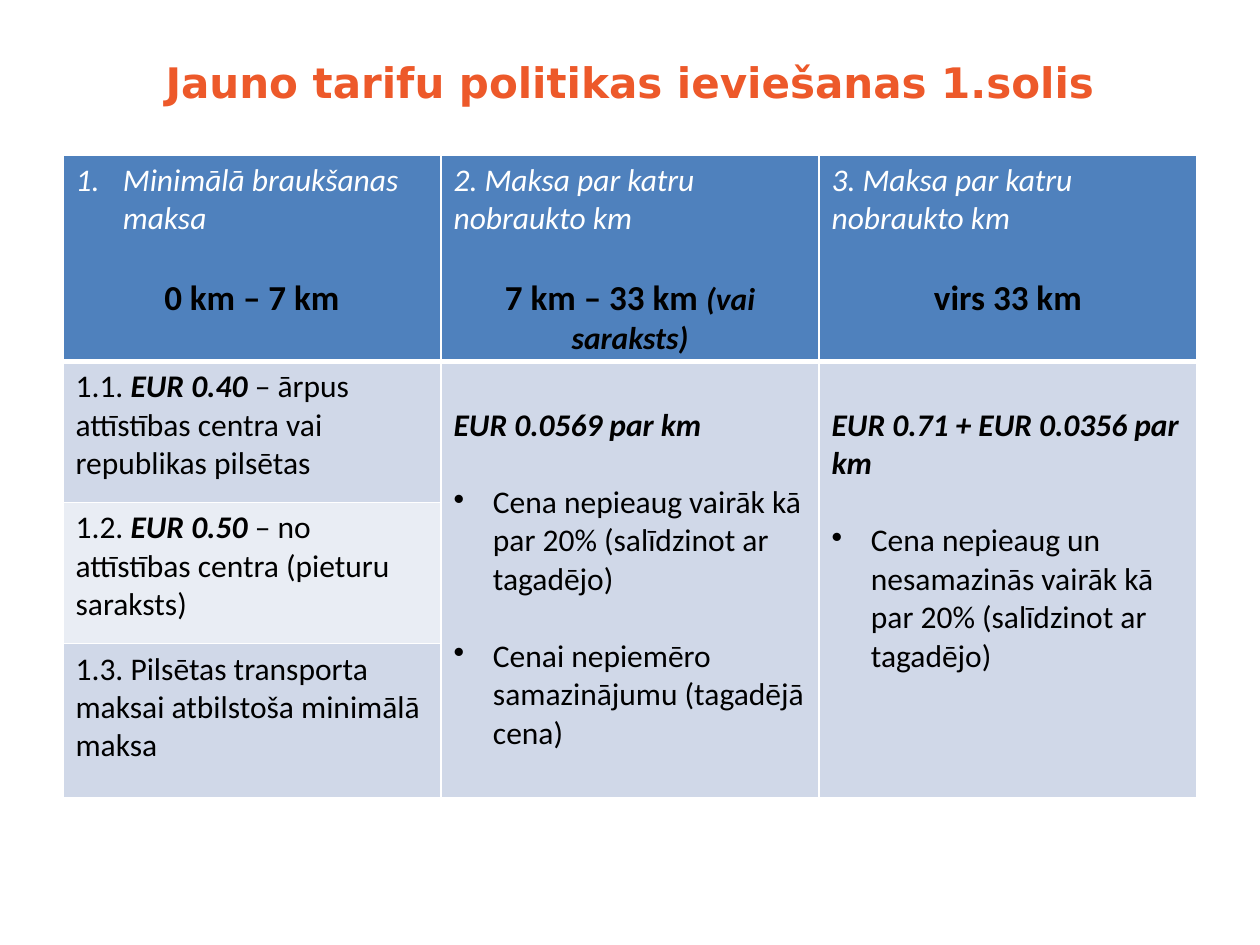
from dataclasses import dataclass

from lxml import etree
from pptx import Presentation
from pptx.dml.color import RGBColor
from pptx.enum import text as te
from pptx.oxml import ns
from pptx.util import Pt


@dataclass(frozen=True)
class Theme:
    title: str = "ED592A"
    head: str = "4F81BD"
    band: str = "D0D8E8"
    pale: str = "E9EDF4"
    white: str = "FFFFFF"
    black: str = "000000"
    font: str = "Calibri"
    wide: str = "DejaVu Sans"
    body: int = 18
    large: int = 20
    huge: int = 24
    line: int = 22  # height of one body line
    thin: int = 1
    thick: int = 3


T = Theme()


@dataclass(frozen=True)
class Run:
    text: str
    bold: bool = False
    slant: bool = False
    size: int = T.body
    color: str = T.black
    font: str = T.font


@dataclass(frozen=True)
class Para:
    runs: tuple[Run, ...]
    mid: bool = False
    gap: int = 0
    mark: str = ""
    hang: float = 0


@dataclass(frozen=True)
class Cell:
    row: int
    col: int
    fill: str
    paras: tuple[Para, ...]
    rows: int = 1
    drop: int = 0


def head(col: int, label: str, *runs: Run, mark: str = "") -> Cell:
    top = Run(label, slant=True, color=T.white)
    return Cell(0, col, T.head, (
        Para((top,), mark=mark, hang=27 if mark else 0),
        Para(runs, mid=True, gap=T.line)))


def item(row: int, fill: str, *runs: Run) -> Cell:
    return Cell(row, 0, fill, (Para(runs),))


def rate(col: int, price: str, *notes: str) -> Cell:
    """A price with bulleted notes, spanning all body rows."""
    lines = [Para((Run(price, bold=True, slant=True),))]
    lines += [Para((Run(note),), gap=T.line, mark="•", hang=22.5) for note in notes]
    return Cell(1, col, T.band, tuple(lines), rows=3, drop=T.line)


def big(words: str) -> Run:
    return Run(words, bold=True, size=T.large)


def price(words: str) -> Run:
    return Run(words, bold=True, slant=True)


CELLS = (
    head(0, "Minimālā braukšanas maksa", big("0 km – 7 km"), mark="1."),
    head(1, "2. Maksa par katru nobraukto km",
         big("7 km – 33 km "), price("(vai saraksts)")),
    head(2, "3. Maksa par katru nobraukto km", big("virs 33 km")),
    item(1, T.band, Run("1.1. "), price("EUR 0.40 "),
         Run("– ārpus attīstības centra vai republikas pilsētas")),
    item(2, T.pale, Run("1.2. "), price("EUR 0.50 "),
         Run("– no attīstības centra (pieturu saraksts)")),
    item(3, T.band, Run("1.3. Pilsētas transporta maksai atbilstoša minimālā maksa")),
    rate(1, "EUR 0.0569 par km",
         "Cena nepieaug vairāk kā par 20% (salīdzinot ar tagadējo)",
         "Cenai nepiemēro samazinājumu (tagadējā cena)"),
    rate(2, "EUR 0.71 + EUR 0.0356 par km",
         "Cena nepieaug un nesamazinās vairāk kā par 20% (salīdzinot ar tagadējo)"),
)


def write(frame, paras: tuple[Para, ...]) -> None:
    for i, para in enumerate(paras):
        p = frame.add_paragraph() if i else frame.paragraphs[0]
        p.alignment = te.PP_ALIGN.CENTER if para.mid else te.PP_ALIGN.LEFT
        if para.gap:
            p.space_before = Pt(para.gap)
        if para.mark:
            hang(p, para)
        for run in para.runs:
            r = p.add_run()
            r.text = run.text
            r.font.name = run.font
            r.font.size = Pt(run.size)
            r.font.bold = run.bold
            r.font.italic = run.slant
            r.font.color.rgb = RGBColor.from_string(run.color)


def hang(p, para: Para) -> None:
    """Give a paragraph a bullet or number with a hanging indent."""
    props = p._p.get_or_add_pPr()
    props.set("marL", str(Pt(para.hang)))
    props.set("indent", str(-Pt(para.hang)))
    if para.mark == "•":
        etree.SubElement(props, ns.qn("a:buChar"), char=para.mark)
    else:
        etree.SubElement(props, ns.qn("a:buAutoNum"), type="arabicPeriod")


def edge(cell, row: int) -> None:
    """Draw white borders, with a thick rule under the header row."""
    props = cell._tc.get_or_add_tcPr()
    thick = {0: "B", 1: "T"}.get(row)
    for side in "LRTB":
        width = T.thick if side == thick else T.thin
        line = etree.SubElement(props, ns.qn(f"a:ln{side}"), w=str(Pt(width)))
        fill = etree.SubElement(line, ns.qn("a:solidFill"))
        etree.SubElement(fill, ns.qn("a:srgbClr"), val=T.white)


def add_title(slide, words: str) -> None:
    frame = slide.shapes.add_textbox(Pt(36), Pt(21.6), Pt(648), Pt(49.7)).text_frame
    frame.word_wrap = True
    frame.vertical_anchor = te.MSO_ANCHOR.MIDDLE
    run = Run(words, bold=True, size=T.huge, color=T.title, font=T.wide)
    write(frame, (Para((run,), mid=True),))


def add_grid(slide, cells: tuple[Cell, ...]) -> None:
    highs = (113, 80.6, 80.6, 88)
    grid = slide.shapes.add_table(
        len(highs), 3, Pt(36), Pt(88.6), Pt(648), Pt(sum(highs))).table
    grid.horz_banding = False
    for i, high in enumerate(highs):
        grid.rows[i].height = Pt(high)
        for cell in grid.rows[i].cells:
            edge(cell, i)
    for spec in cells:
        cell = grid.cell(spec.row, spec.col)
        if spec.rows > 1:
            cell.merge(grid.cell(spec.row + spec.rows - 1, spec.col))
        cell.fill.solid()
        cell.fill.fore_color.rgb = RGBColor.from_string(spec.fill)
        cell.margin_top = Pt(3.6 + spec.drop)
        write(cell.text_frame, spec.paras)


def main() -> None:
    deck = Presentation()
    deck.slide_width, deck.slide_height = Pt(720), Pt(540)
    slide = deck.slides.add_slide(deck.slide_layouts[6])
    add_title(slide, "Jauno tarifu politikas ieviešanas 1.solis")
    add_grid(slide, CELLS)
    deck.save("out.pptx")


if __name__ == "__main__":
    main()
